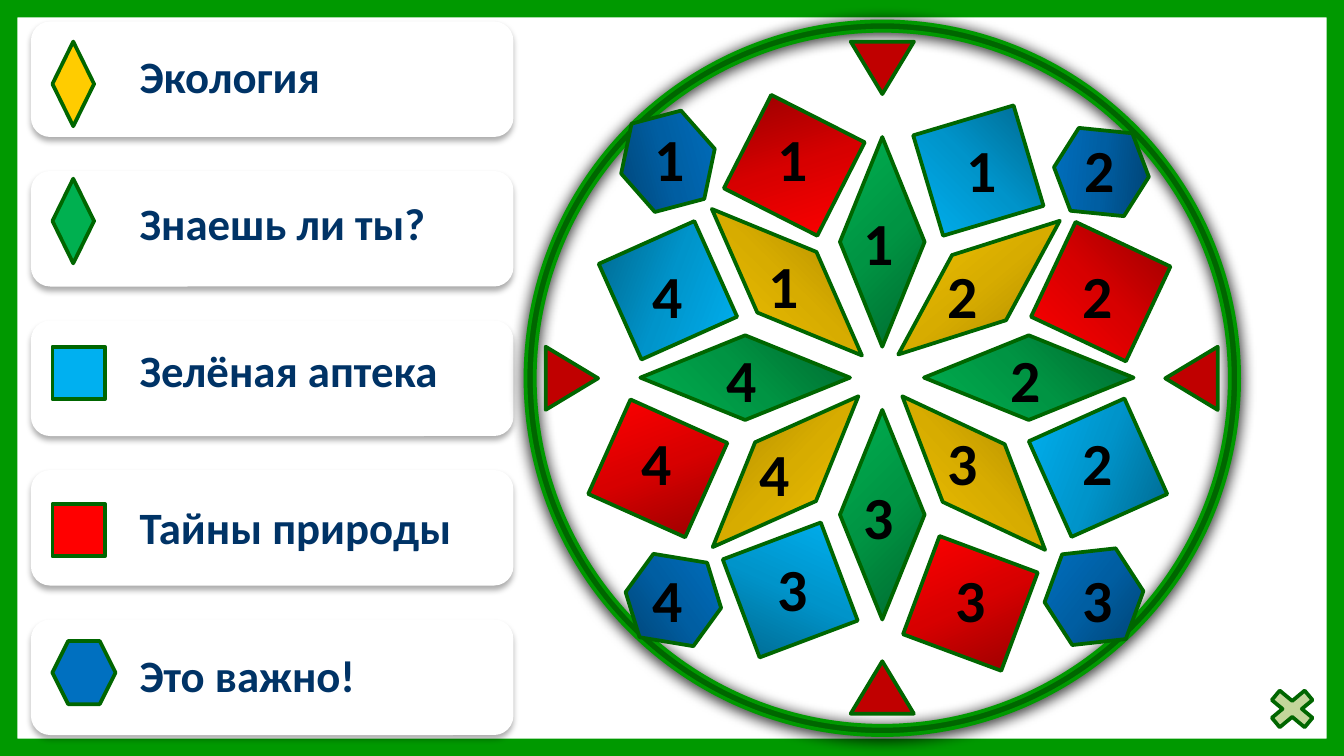
import copy

import lxml.etree
import pptx
import pptx.dml.color
import pptx.enum.shapes
import pptx.enum.text
import pptx.oxml.ns
import pptx.util

Inches = pptx.util.Inches
RGBColor = pptx.dml.color.RGBColor
Kind = pptx.enum.shapes.MSO_SHAPE
Align = pptx.enum.text.PP_ALIGN
qn = pptx.oxml.ns.qn

COLORS = {
    "white": "FFFFFF", "black": "000000", "navy": "003366", "frame": "009900",
    "outline": "006600", "pointer": "C00000", "close": "C3D69B",
    "yellow": "FFCC00", "green": "00B050", "sky": "00B0F0", "red": "FF0000", "blue": "0070C0",
}
GRADIENTS = {
    "yellow": ("977900", "D7AC00", "FFCC00"),
    "green": ("00682F", "009443", "00B050"),
    "sky": ("00688E", "0094CA", "00B0F0"),
    "red": ("970000", "D70000", "FF0000"),
    "blue": ("004272", "005EA2", "0070C0"),
}
NUMBER_FORMAT = {"name": "Calibri", "size": pptx.util.Pt(32), "bold": True}
TOPIC_FORMAT = {"name": "Calibri", "size": pptx.util.Pt(24), "bold": True}
WIDTH = 10
HEIGHT = WIDTH * 9 / 16

presentation = pptx.Presentation()
presentation.slide_width = Inches(WIDTH)
presentation.slide_height = Inches(HEIGHT)
slide = presentation.slides.add_slide(presentation.slide_layouts[6])


def add_figure(kind, box, color, line="outline", rotation=0, shadow=None):
    shape = slide.shapes.add_shape(kind, *[Inches(value) for value in box])
    shape.rotation = rotation
    shape.shadow.inherit = False
    shape.fill.solid()
    shape.fill.fore_color.rgb = RGBColor.from_string(COLORS[color])
    if line:
        shape.line.color.rgb = RGBColor.from_string(COLORS[line])
        shape.line.width = pptx.util.Pt(2)
    else:
        shape.line.fill.background()
    if shadow:
        opacity, blur, distance = shadow
        effects = shape.element.spPr.find(qn("a:effectLst"))
        outer = lxml.etree.SubElement(
            effects, qn("a:outerShdw"), blurRad=str(pptx.util.Pt(blur)),
            dist=str(pptx.util.Pt(distance)), dir="5400000", algn="ctr", rotWithShape="0")
        tint = lxml.etree.SubElement(outer, qn("a:srgbClr"), val=COLORS["black"])
        lxml.etree.SubElement(tint, qn("a:alpha"), val=str(opacity * 1000))
    return shape


def add_label(text, box, color, font_format, alignment=Align.LEFT):
    frame = slide.shapes.add_textbox(*[Inches(value) for value in box]).text_frame
    frame.word_wrap = True
    paragraph = frame.paragraphs[0]
    paragraph.text = text
    paragraph.alignment = alignment
    for name, value in font_format.items():
        setattr(paragraph.font, name, value)
    paragraph.font.color.rgb = RGBColor.from_string(COLORS[color])


border = add_figure(Kind.FRAME, (0, 0, WIDTH, HEIGHT), "frame", line=None)
border.adjustments[0] = 0.023

topics = [
    ("Экология", 0.31, 2.81, Kind.DIAMOND, "yellow", (0.39, 0.31, 0.31, 0.63)),
    ("Знаешь ли ты?", 1.41, 2.42, Kind.DIAMOND, "green", (0.39, 1.33, 0.31, 0.63)),
    ("Зелёная аптека", 2.5, 2.58, Kind.RECTANGLE, "sky", (0.39, 2.58, 0.39, 0.39)),
    ("Тайны природы", 3.67, 2.58, Kind.RECTANGLE, "red", (0.39, 3.75, 0.39, 0.39)),
    ("Это важно!", 4.77, 2.34, Kind.HEXAGON, "blue", (0.39, 4.77, 0.47, 0.47)),
]
for index, (topic, top, width, kind, color, icon_box) in enumerate(topics):
    card_top = 0.16 + index * 4.45 / 4
    add_figure(Kind.ROUNDED_RECTANGLE, (0.23, card_top, 3.59, 0.86), "white", None, shadow=(32, 3.5, 2.2))
    add_figure(kind, icon_box, color)
    add_label(topic, (0.94, top, width, 0.51), "navy", TOPIC_FORMAT)

disc = add_figure(Kind.OVAL, (3.98, 0.23, 5.16, 5.16), "white", line=None)
disc_color = disc.element.spPr.find(qn("a:solidFill"))[0]
lxml.etree.SubElement(disc_color, qn("a:alpha"), val="48000")
ring = add_figure(Kind.DONUT, (3.91, 0.16, 5.31, 5.31), "outline", "frame", shadow=(100, 8.5, 1))
ring.adjustments[0] = 0.013

diamond, square = (0.63, 1.56), (0.78, 0.78)
wide, narrow = 0.55, 0.39
pieces = [
    (Kind.DIAMOND, "green", (6.25, 1.02, *diamond), 0, 225, "1", 6.33, 1.48, wide),
    (Kind.DIAMOND, "green", (7.34, 2.03, *diamond), 270, 225, "2", 7.42, 2.5, wide),
    (Kind.DIAMOND, "green", (6.25, 3.05, *diamond), 0, 225, "3", 6.33, 3.52, wide),
    (Kind.DIAMOND, "green", (5.23, 2.03, *diamond), 270, 225, "4", 5.31, 2.5, wide),
    (Kind.DIAMOND, "yellow", (5.54, 1.32, *diamond), 314.3, 180, "1", 5.62, 1.8, wide),
    (Kind.DIAMOND, "yellow", (6.97, 1.36, *diamond), 230.4, 0, "2", 6.95, 1.88, wide),
    (Kind.DIAMOND, "yellow", (6.93, 2.74, *diamond), 317.1, 180, "3", 6.95, 3.12, wide),
    (Kind.DIAMOND, "yellow", (5.53, 2.73, *diamond), 44, 0, "4", 5.55, 3.2, wide),
    (Kind.RECTANGLE, "sky", (6.89, 0.88, *square), 343.4, None, "1", 7.03, 0.94, wide),
    (Kind.RECTANGLE, "sky", (7.78, 3.09, *square), 335.9, 225, "2", 7.89, 3.12, wide),
    (Kind.RECTANGLE, "sky", (5.49, 4, *square), 339.4, 315, "3", 5.62, 4.06, wide),
    (Kind.RECTANGLE, "sky", (4.58, 1.77, *square), 335.9, 45, "4", 4.69, 1.88, wide),
    (Kind.RECTANGLE, "red", (5.52, 0.84, *square), 26.9, 45, "1", 5.62, 0.86, wide),
    (Kind.RECTANGLE, "red", (7.8, 1.78, *square), 25.2, None, "2", 7.89, 1.88, wide),
    (Kind.RECTANGLE, "red", (6.83, 4.1, *square), 20.4, 225, "3", 6.95, 4.14, wide),
    (Kind.RECTANGLE, "red", (4.51, 3.09, 0.77, 0.79), 294.1, 315, "4", 4.61, 3.12, wide),
    (Kind.HEXAGON, "blue", (4.61, 0.86, 0.72, 0.68), 345.2, 0, "1", 4.77, 0.86, narrow),
    (Kind.HEXAGON, "blue", (7.84, 0.97, 0.71, 0.62), 5.8, 180, "2", 7.97, 0.94, narrow),
    (Kind.HEXAGON, "blue", (7.77, 4.1, 0.74, 0.68), 353.6, 225, "3", 7.89, 4.14, wide),
    (Kind.HEXAGON, "blue", (4.65, 4.15, 0.72, 0.63), 9.4, 315, "4", 4.69, 4.14, wide),
]
for kind, color, box, rotation, angle, number, left, top, width in pieces:
    shape = add_figure(kind, box, color, rotation=rotation)
    shape.fill.gradient()
    gradient = shape.element.spPr.find(qn("a:gradFill"))
    stop_list = gradient.find(qn("a:gsLst"))
    stop_list.insert(1, copy.deepcopy(stop_list[0]))
    for stop, position, shade in zip(shape.fill.gradient_stops, (0, 0.5, 1), GRADIENTS[color]):
        stop.position = position
        stop.color.rgb = RGBColor.from_string(shade)
    if angle is None:
        radial = lxml.etree.Element(qn("a:path"), path="circle")
        lxml.etree.SubElement(radial, qn("a:fillToRect"), l="100000", b="100000")
        gradient.replace(gradient.find(qn("a:lin")), radial)
        lxml.etree.SubElement(gradient, qn("a:tileRect"), t="-100000", r="-100000")
    else:
        shape.fill.gradient_angle = (360 - angle) % 360
    alignment = Align.LEFT if kind == Kind.DIAMOND else Align.CENTER
    add_label(number, (left, top, width, 0.64), "black", NUMBER_FORMAT, alignment)

for left, top, rotation in [(6.33, 4.92, 0), (4.02, 2.62, 90), (6.33, 0.31, 180), (8.63, 2.62, 270)]:
    add_figure(Kind.ISOSCELES_TRIANGLE, (left, top, 0.47, 0.39), "pointer", rotation=rotation)

add_figure(Kind.MATH_MULTIPLY, (9.38, 5.08, 0.47, 0.39), "close")

presentation.save("out.pptx")
